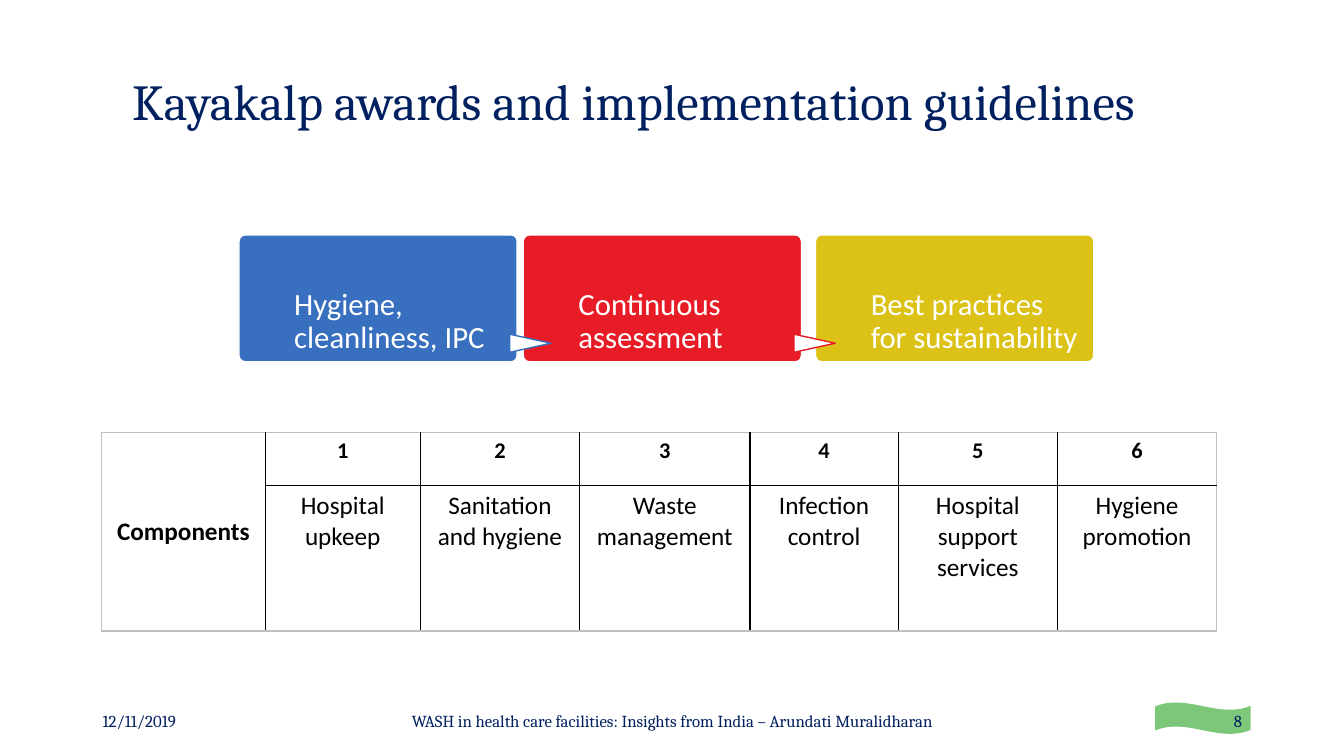
from lxml.etree import SubElement
from pptx import Presentation
from pptx.dml.color import RGBColor
from pptx.enum.shapes import MSO_SHAPE
from pptx.enum.text import MSO_ANCHOR, MSO_AUTO_SIZE, PP_ALIGN
from pptx.oxml.ns import qn
from pptx.util import Inches, Pt

NAVY, WHITE, BLACK, GREY = "002060", "FFFFFF", "000000", "BFBFBF"
BLUE, RED, YELLOW, GREEN = "3870BF", "E81C26", "DCC217", "7DC77A"

STEPS = [
    (17.78, BLUE, "Hygiene, cleanliness, IPC"),
    (38.93, RED, "Continuous assessment"),
    (60.68, YELLOW, "Best practices for sustainability"),
]
COMPONENTS = [
    "Hospital upkeep",
    "Sanitation and hygiene",
    "Waste management",
    "Infection control",
    "Hospital support services",
    "Hygiene promotion",
]
COLUMN_SHARES = [12.15, 11.55, 11.85, 12.68, 11.03, 11.85, 11.85]
ROW_SHARES = [7.07, 19.2]
FOOTERS = [
    (17.78, 64.5, PP_ALIGN.CENTER,
     "WASH in health care facilities: Insights from India – Arundati Muralidharan"),
    (6.9, 9.83, PP_ALIGN.LEFT, "12/11/2019"),
    (84.75, 8.4, PP_ALIGN.RIGHT, "8"),
]


def color(value):
    """Return the colour for a hex string."""
    return RGBColor.from_string(value)


def assign(target, values):
    """Set every attribute in values on target."""
    for name, value in values.items():
        setattr(target, name, value)


class SlideBuilder:
    """Hold the deck, its style and the current slide; places are percent of the slide."""

    heading = {"name": "Cambria", "size": Pt(36)}
    footer = {"name": "Cambria", "size": Pt(12)}
    step = {"name": "Calibri", "size": Pt(22)}
    number = {"name": "Calibri", "size": Pt(16), "bold": True}
    label = {"name": "Calibri", "size": Pt(18), "bold": True}
    entry = {"name": "Calibri", "size": Pt(18), "bold": False}

    def __init__(self):
        self.deck = Presentation()
        assign(self.deck, {"slide_width": Inches(13.33), "slide_height": Inches(7.5)})
        self.page = self.deck.slides.add_slide(self.deck.slide_layouts[5])

    def across(self, share):
        """Convert a share of the slide width to a length."""
        return int(self.deck.slide_width * share / 100)

    def down(self, share):
        """Convert a share of the slide height to a length."""
        return int(self.deck.slide_height * share / 100)

    def area(self, left, top, width, height):
        """Convert four shares to left, top, width and height."""
        return self.across(left), self.down(top), self.across(width), self.down(height)

    def fill_text(self, frame, text, font, ink, frame_values=None, **para_values):
        """Put one formatted paragraph into a text frame."""
        assign(frame, {"word_wrap": True, **(frame_values or {})})
        para = frame.paragraphs[0]
        assign(para, para_values)
        span = para.add_run()
        span.text = text
        assign(span.font, font)
        span.font.color.rgb = color(ink)

    def title(self, text, *shares):
        """Move and fill the title placeholder."""
        box = self.page.shapes.title
        assign(box, dict(zip(("left", "top", "width", "height"), self.area(*shares))))
        frame_values = {"vertical_anchor": MSO_ANCHOR.MIDDLE, "auto_size": MSO_AUTO_SIZE.NONE}
        self.fill_text(box.text_frame, text, self.heading, NAVY, frame_values,
                       alignment=PP_ALIGN.LEFT, line_spacing=0.9)

    def text(self, text, alignment, *shares):
        """Add a footer text box."""
        box = self.page.shapes.add_textbox(*self.area(*shares))
        self.fill_text(box.text_frame, text, self.footer, NAVY,
                       {"vertical_anchor": MSO_ANCHOR.MIDDLE}, alignment=alignment)

    def shape(self, kind, fill, line, *shares):
        """Add a flat filled shape with a one point outline."""
        box = self.page.shapes.add_shape(kind, *self.area(*shares))
        box.shadow.inherit = False
        box.fill.solid()
        box.fill.fore_color.rgb = color(fill)
        box.line.color.rgb = color(line)
        box.line.width = Pt(1)
        return box

    def card(self, text, fill, *shares):
        """Add a rounded card with its text set low and indented."""
        box = self.shape(MSO_SHAPE.ROUNDED_RECTANGLE, fill, WHITE, *shares)
        box.adjustments[0] = 0.05
        frame_values = {
            "margin_left": Inches(0.53), "margin_right": Inches(0.13),
            "margin_top": Inches(0.52), "margin_bottom": 0,
            "vertical_anchor": MSO_ANCHOR.TOP,
        }
        self.fill_text(box.text_frame, text, self.step, WHITE, frame_values,
                       alignment=PP_ALIGN.LEFT, line_spacing=0.9)

    def pointer(self, line, *shares):
        """Add a white triangle pointing right."""
        self.shape(MSO_SHAPE.FLOWCHART_EXTRACT, WHITE, line, *shares).rotation = 90

    def border(self, cell, edge, ink):
        """Draw one edge of a cell."""
        line = SubElement(cell._tc.get_or_add_tcPr(), qn("a:ln" + edge), w=str(Pt(1)))
        SubElement(SubElement(line, qn("a:solidFill")), qn("a:srgbClr"), val=ink)

    def cell(self, cell, text, font, outer, anchor=MSO_ANCHOR.TOP):
        """Format a cell, with grey lines on its outer edges."""
        for edge in "LRTB":
            self.border(cell, edge, GREY if edge in outer else BLACK)
        cell.fill.solid()
        cell.fill.fore_color.rgb = color(WHITE)
        cell.vertical_anchor = anchor
        if text:
            self.fill_text(cell.text_frame, text, font, BLACK, alignment=PP_ALIGN.CENTER)

    def table(self, label, entries, left, top):
        """Add the numbered table with a label cell over both rows."""
        shares = left, top, sum(COLUMN_SHARES), sum(ROW_SHARES)
        table = self.page.shapes.add_table(2, len(COLUMN_SHARES), *self.area(*shares)).table
        assign(table, {"first_row": False, "horz_banding": False})
        for column, share in zip(table.columns, COLUMN_SHARES):
            column.width = self.across(share)
        for row, share in zip(table.rows, ROW_SHARES):
            row.height = self.down(share)
        table.cell(0, 0).merge(table.cell(1, 0))
        self.cell(table.cell(0, 0), label, self.label, "LTB", MSO_ANCHOR.MIDDLE)
        self.cell(table.cell(1, 0), "", self.label, "LTB")
        for index, entry in enumerate(entries, 1):
            side = "R" if index == len(entries) else ""
            self.cell(table.cell(0, index), str(index), self.number, "T" + side)
            self.cell(table.cell(1, index), entry, self.entry, "B" + side)


def main():
    """Build and save the slide."""
    builder = SlideBuilder()
    builder.shape(MSO_SHAPE.WAVE, GREEN, GREEN, 86, 93, 7, 4)
    builder.title("Kayakalp awards and implementation guidelines", 9.08, 5.33, 84.08, 16.8)
    for left, width, alignment, text in FOOTERS:
        builder.text(text, alignment, left, 92.67, width, 5.33)
    for left, fill, text in STEPS:
        builder.card(text, fill, left, 31.07, 20.7, 16.8)
    for left, fill, _ in STEPS[:-1]:
        builder.pointer(fill, left + 21, 42.67, 1.35, 5.47)
    builder.table("Components", COMPONENTS, 7.58, 57.2)
    builder.deck.save("out.pptx")


if __name__ == "__main__":
    main()
